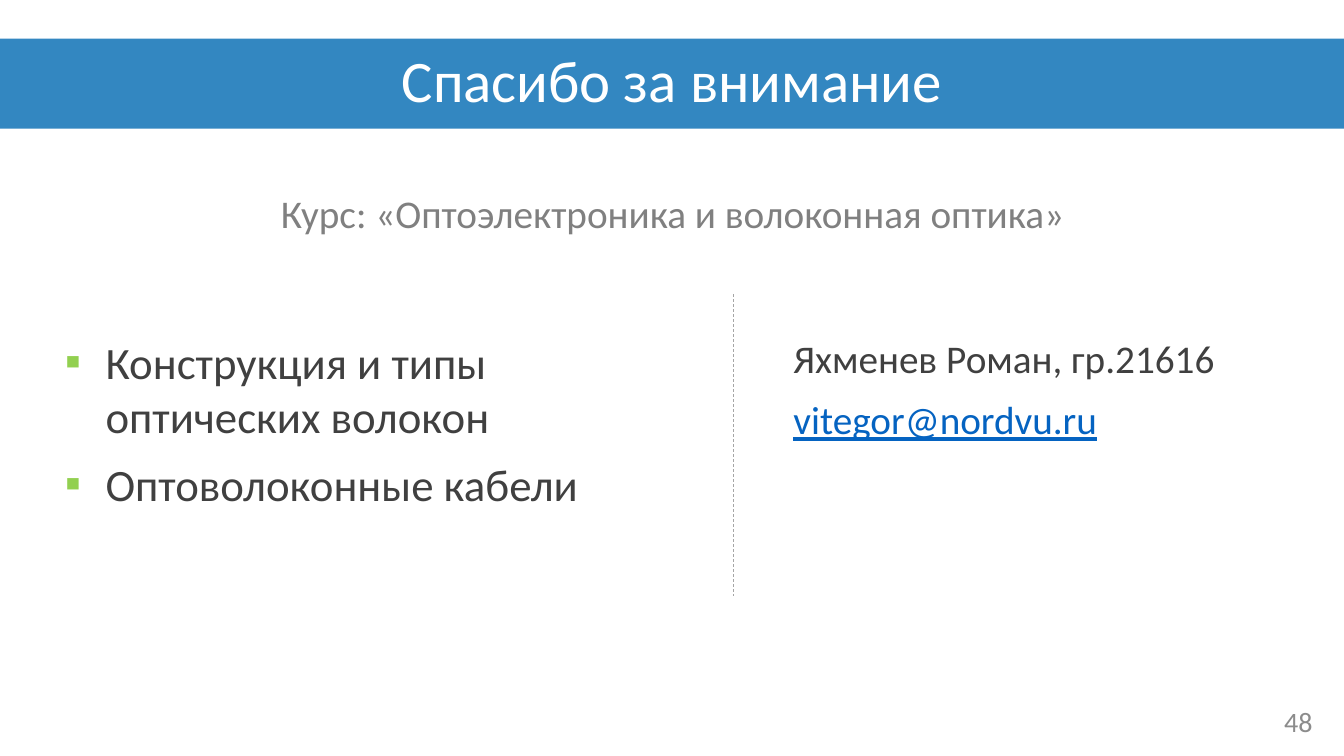
from lxml.etree import SubElement
from pptx import Presentation
from pptx.dml.color import RGBColor
from pptx.enum.dml import MSO_LINE
from pptx.enum.shapes import MSO_CONNECTOR
from pptx.enum.text import MSO_ANCHOR, MSO_AUTO_SIZE, PP_ALIGN
from pptx.oxml.ns import qn
from pptx.util import Inches, Pt

BLUE = RGBColor(0x33, 0x87, 0xC1)
GREEN = RGBColor(0x92, 0xD0, 0x50)
WHITE = RGBColor(0xFF, 0xFF, 0xFF)
DARK = RGBColor(0x40, 0x40, 0x40)
GREY = RGBColor(0x80, 0x80, 0x80)
PALE = RGBColor(0x8C, 0x8C, 0x8C)
RULE = RGBColor(0xA5, 0xA5, 0xA5)
LINK = RGBColor(0x05, 0x63, 0xC1)

FRAME = {"word_wrap": True, "auto_size": MSO_AUTO_SIZE.NONE}
MIDDLE = {"vertical_anchor": MSO_ANCHOR.MIDDLE}
CENTRE = {"alignment": PP_ALIGN.CENTER}
RIGHT = {"alignment": PP_ALIGN.RIGHT}
SPACED = {"space_before": Pt(10)}


def apply(target, values):
    for name, value in values.items():
        setattr(target, name, value)


class Deck:
    font = "Calibri"

    def __init__(self, width, height):
        self.show = Presentation()
        apply(self.show, {"slide_width": Inches(width), "slide_height": Inches(height)})
        self.slide = self.show.slides.add_slide(self.show.slide_layouts[1])
        self.shapes = self.slide.shapes

    def place(self, left, top, width, height):
        wide, high = self.show.slide_width, self.show.slide_height
        return [round(share * side / 100) for share, side in
                zip((left, top, width, height), (wide, high, wide, high))]

    def fill(self, shape, lines, size, color, para={}, frame={}):
        text = shape.text_frame
        apply(text, {**FRAME, **frame})
        text.text = "\n".join(lines)
        for item in text.paragraphs:
            apply(item, para)
            for run in item.runs:
                apply(run.font, {"name": self.font, "size": Pt(size)})
                run.font.color.rgb = color
        return text.paragraphs

    def move(self, shape, box):
        apply(shape, dict(zip(("left", "top", "width", "height"), self.place(*box))))
        return shape

    def title(self, box, line):
        bar = self.move(self.shapes.title, box)
        bar.fill.solid()
        bar.fill.fore_color.rgb = BLUE
        self.fill(bar, [line], 42, WHITE, {**CENTRE, "line_spacing": 0.9}, MIDDLE)

    def bullets(self, box, lines):
        body = self.move(self.slide.placeholders[1], box)
        for item in self.fill(body, lines, 32, DARK, SPACED):
            props = item._p.get_or_add_pPr()
            props.set("marL", str(Inches(0.4)))
            props.set("indent", str(-Inches(0.4)))
            tint = SubElement(props, qn("a:buClr"))
            SubElement(tint, qn("a:srgbClr"), val=str(GREEN))
            SubElement(props, qn("a:buFont"), typeface=self.font)
            SubElement(props, qn("a:buChar"), char="▪")

    def text(self, box, lines, size, color, para={}, frame={}):
        shape = self.shapes.add_textbox(*self.place(*box))
        return self.fill(shape, lines, size, color, para, frame)

    def divide(self, left, top, end):
        x, y, _, low = self.place(left, top, 0, end)
        rule = self.shapes.add_connector(MSO_CONNECTOR.STRAIGHT, x, y, x, low)
        apply(rule.line, {"width": Pt(0.5), "dash_style": MSO_LINE.DASH})
        rule.line.color.rgb = RULE
        SubElement(rule._element.spPr, qn("a:effectLst"))


def main():
    deck = Deck(13.33, 7.5)
    deck.title((0, 5.1, 100, 11.9), "Спасибо за внимание")
    deck.bullets((4.1, 43.6, 49.1, 30.7),
                 ["Конструкция и типы оптических волокон", "Оптоволоконные кабели"])
    deck.text((70.7, 92.7, 27.7, 5.3), ["48"], 20, PALE, RIGHT, MIDDLE)
    name, mail = deck.text((58.3, 43.6, 33.8, 30.7),
                           ["Яхменев Роман, гр.21616", "vitegor@nordvu.ru"],
                           28, DARK, SPACED)
    mail.runs[0].font.underline = True
    mail.runs[0].font.color.rgb = LINK
    deck.divide(54.6, 38.9, 78.9)
    deck.text((19.8, 24.4, 60.5, 7.6), ["Курс: «Оптоэлектроника и волоконная оптика»"],
              28, GREY, CENTRE,
              {"word_wrap": False, "auto_size": MSO_AUTO_SIZE.SHAPE_TO_FIT_TEXT})
    deck.show.save("out.pptx")


if __name__ == "__main__":
    main()
